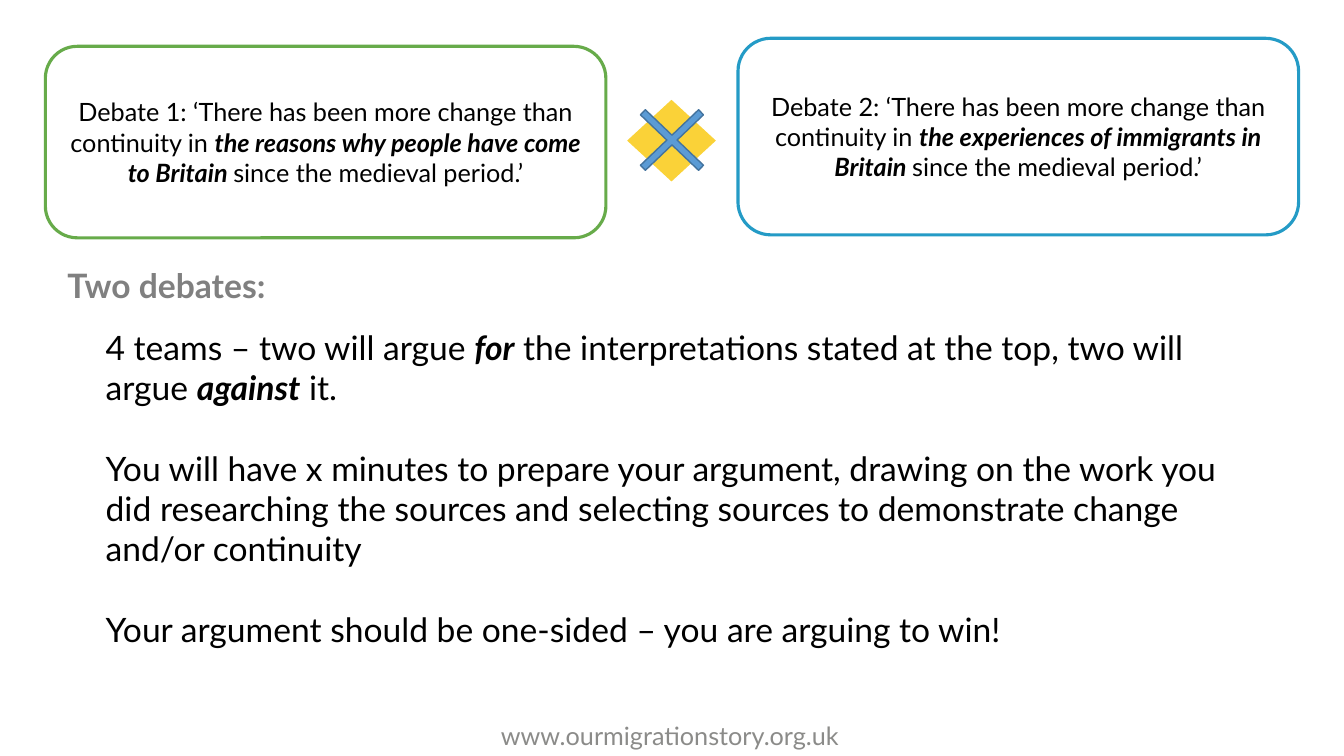
from dataclasses import dataclass

from pptx import Presentation
from pptx.dml.color import RGBColor
from pptx.enum.shapes import MSO_SHAPE
from pptx.enum.text import MSO_ANCHOR, MSO_AUTO_SIZE, PP_ALIGN
from pptx.shapes.autoshape import Shape
from pptx.slide import Slide
from pptx.text.text import TextFrame
from pptx.util import Inches, Pt

ROUNDED = MSO_SHAPE.ROUNDED_RECTANGLE
DIAMOND = MSO_SHAPE.FLOWCHART_DECISION
CROSS = MSO_SHAPE.MATH_MULTIPLY
MIDDLE = MSO_ANCHOR.MIDDLE
CENTER = PP_ALIGN.CENTER
GROW = MSO_AUTO_SIZE.SHAPE_TO_FIT_TEXT

Box = tuple[float, float, float, float]


@dataclass(frozen=True)
class Theme:
    font: str = "Lato"
    body_size: int = 24
    small_size: int = 18
    paragraph_gap: float = 28.8
    black: str = "000000"
    white: str = "FFFFFF"
    heading: str = "808080"
    footer: str = "8B8B89"
    green: str = "67AB4A"
    blue: str = "249BC6"
    yellow: str = "FAD238"
    cross_fill: str = "5B9BD5"
    cross_line: str = "43739E"


@dataclass(frozen=True)
class Run:
    text: str
    bold: bool = False
    italic: bool = False


@dataclass(frozen=True)
class Debate:
    box: Box
    outline: str
    number: int
    topic: str


THEME = Theme()

DEBATES = [
    Debate((0.45, 0.46, 5.56, 1.9), THEME.green, 1,
           "the reasons why people have come to Britain "),
    Debate((7.32, 0.38, 5.56, 1.95), THEME.blue, 2,
           "the experiences of immigrants in Britain "),
]

INSTRUCTIONS = [
    [
        Run("4 teams – two will argue "),
        Run("for", bold=True, italic=True),
        Run(" the interpretations stated at the top, two will argue "),
        Run("against", bold=True, italic=True),
        Run(" it."),
    ],
    [Run("You will have x minutes to prepare your argument, drawing on the "
         "work you did researching the sources and selecting sources to "
         "demonstrate change and/or continuity")],
    [Run("Your argument should be one-sided – you are arguing to win!")],
]


def write_paragraphs(frame: TextFrame, paragraphs: list[list[Run]], size: int, color: str) -> None:
    for index, runs in enumerate(paragraphs):
        paragraph = frame.add_paragraph() if index else frame.paragraphs[0]
        if index:
            paragraph.space_before = Pt(THEME.paragraph_gap)
        for item in runs:
            run = paragraph.add_run()
            run.text = item.text
            run.font.name = THEME.font
            run.font.size = Pt(size)
            run.font.bold = item.bold
            run.font.italic = item.italic
            run.font.color.rgb = RGBColor.from_string(color)


def add_text(slide: Slide, box: Box, paragraphs: list[list[Run]], size: int, color: str) -> TextFrame:
    frame = slide.shapes.add_textbox(*map(Inches, box)).text_frame
    frame.word_wrap = True
    write_paragraphs(frame, paragraphs, size, color)
    return frame


def add_filled_shape(slide: Slide, kind: MSO_SHAPE, box: Box, fill: str,
                     outline: str | None = None, width: float = 1) -> Shape:
    shape = slide.shapes.add_shape(kind, *map(Inches, box))
    shape.shadow.inherit = False
    shape.fill.solid()
    shape.fill.fore_color.rgb = RGBColor.from_string(fill)
    if outline:
        shape.line.color.rgb = RGBColor.from_string(outline)
        shape.line.width = Pt(width)
    else:
        shape.line.fill.background()
    return shape


def add_debate(slide: Slide, debate: Debate) -> None:
    card = add_filled_shape(slide, ROUNDED, debate.box, THEME.white, debate.outline, 2.25)
    frame = card.text_frame
    frame.word_wrap = True
    frame.vertical_anchor = MIDDLE
    statement = [
        Run(f"Debate {debate.number}: ‘There has been more change than continuity in "),
        Run(debate.topic, bold=True, italic=True),
        Run("since the medieval period.’"),
    ]
    write_paragraphs(frame, [statement], THEME.small_size, THEME.black)
    frame.paragraphs[0].alignment = CENTER


def main() -> None:
    presentation = Presentation()
    presentation.slide_width = Inches(13.33)
    presentation.slide_height = Inches(7.5)
    slide = presentation.slides.add_slide(presentation.slide_layouts[6])

    footer = add_text(slide, (4.87, 7.1, 3.6, 0.4), [[Run("www.ourmigrationstory.org.uk")]],
                      THEME.small_size, THEME.footer)
    footer.word_wrap = False
    footer.auto_size = GROW

    heading = add_text(slide, (0.57, 2.62, 2.37, 0.63), [[Run("Two debates:", bold=True)]],
                       THEME.body_size, THEME.heading)
    heading.paragraphs[0].line_spacing = 0.9

    for debate in DEBATES:
        add_debate(slide, debate)

    instructions = add_text(slide, (0.95, 3.19, 11.43, 3.33), INSTRUCTIONS,
                            THEME.body_size, THEME.black)
    instructions.auto_size = GROW

    add_filled_shape(slide, DIAMOND, (6.22, 0.99, 0.88, 0.81), THEME.yellow)
    cross = add_filled_shape(slide, CROSS, (6.11, 0.86, 1.11, 1.06),
                             THEME.cross_fill, THEME.cross_line)
    cross.adjustments[0] = 0.066

    presentation.save("out.pptx")


if __name__ == "__main__":
    main()
